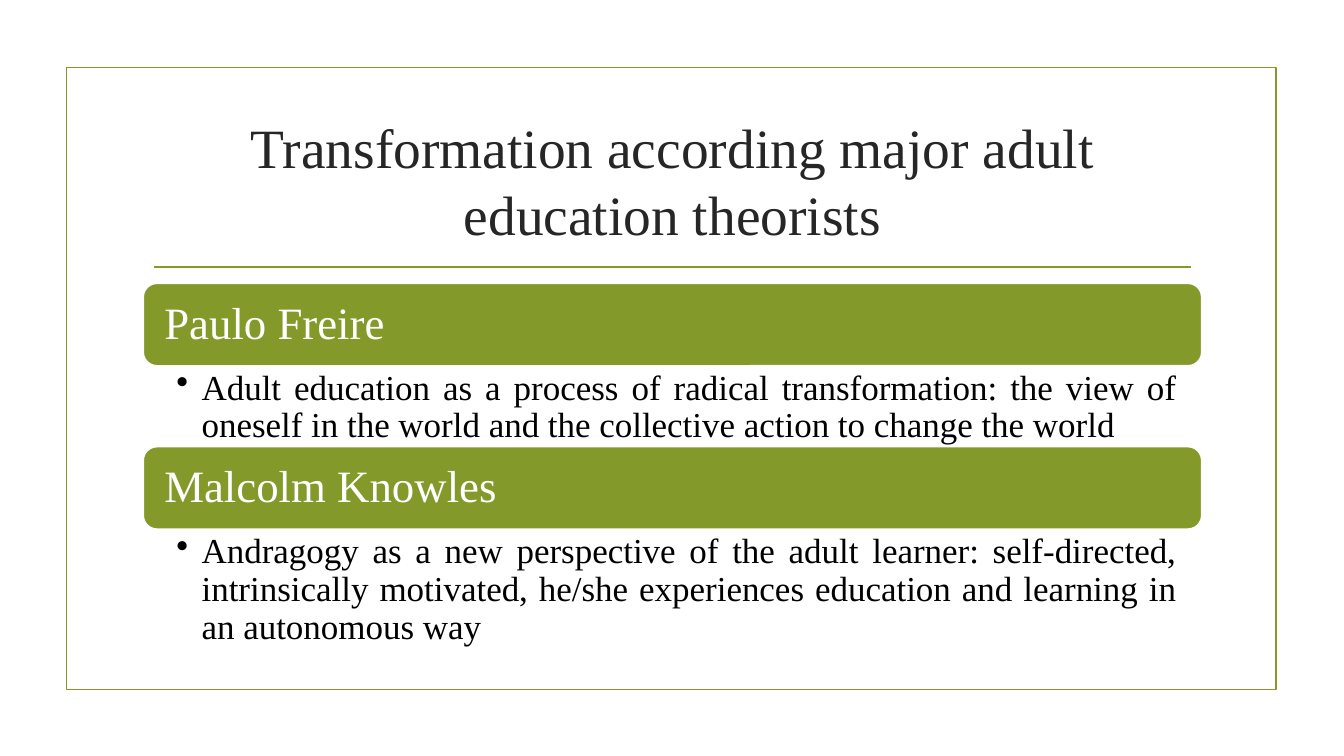
from dataclasses import dataclass

from pptx import Presentation
from pptx.dml.color import RGBColor
from pptx.enum.shapes import MSO_CONNECTOR, MSO_SHAPE
from pptx.enum.text import MSO_ANCHOR, PP_ALIGN
from pptx.oxml.ns import qn
from pptx.shapes.base import BaseShape
from pptx.slide import Slide
from pptx.text.text import TextFrame
from pptx.util import Emu, Pt

FONT = "Times New Roman"
GREEN, WHITE, BLACK, CHARCOAL = "83992A", "FFFFFF", "000000", "262626"
CONTENT_LEFT, CONTENT_WIDTH = 142, 1050
CONTENT_TOP, HEADER_HEIGHT = 281, 82


@dataclass(frozen=True)
class Theorist:
    name: str
    idea: str
    idea_height: int


@dataclass(frozen=True)
class TextStyle:
    size: float
    color: str
    align: PP_ALIGN
    anchor: MSO_ANCHOR
    insets: tuple[int, int, int, int]
    line_spacing: float = 1.0
    bullet: bool = False


TITLE = TextStyle(39.6, CHARCOAL, PP_ALIGN.CENTER, MSO_ANCHOR.MIDDLE, (10, 5, 10, 5))
HEADER = TextStyle(32, WHITE, PP_ALIGN.LEFT, MSO_ANCHOR.MIDDLE, (17, 17, 17, 17), 0.9)
IDEA = TextStyle(25, BLACK, PP_ALIGN.JUSTIFY, MSO_ANCHOR.TOP, (33, 4, 25, 4), 0.9, True)

THEORISTS = [
    Theorist(
        "Paulo Freire",
        "Adult education as a process of radical transformation: the view of "
        "oneself in the world and the collective action to change the world",
        80,
    ),
    Theorist(
        "Malcolm Knowles",
        "Andragogy as a new perspective of the adult learner: self-directed, "
        "intrinsically motivated, he/she experiences education and learning in "
        "an autonomous way",
        116,
    ),
]


def px(value: int) -> Emu:
    return Emu(value * 9144)


def rgb(color: str) -> RGBColor:
    return RGBColor.from_string(color)


def write_text(frame: TextFrame, text: str, style: TextStyle) -> None:
    frame.word_wrap = True
    frame.vertical_anchor = style.anchor
    left, top, right, bottom = map(px, style.insets)
    frame.margin_left, frame.margin_top = left, top
    frame.margin_right, frame.margin_bottom = right, bottom
    paragraph = frame.paragraphs[0]
    paragraph.alignment = style.align
    paragraph.line_spacing = style.line_spacing
    if style.bullet:
        properties = paragraph._p.get_or_add_pPr()
        properties.set("marL", str(px(25)))
        properties.set("indent", str(px(-25)))
        bullet = properties.makeelement(qn("a:buChar"), {"char": "•"})
        properties.append(bullet)
    run = paragraph.add_run()
    run.text = text
    run.font.name = FONT
    run.font.size = Pt(style.size)
    run.font.color.rgb = rgb(style.color)


def add_text(slide: Slide, left: int, top: int, width: int, height: int,
             text: str, style: TextStyle) -> None:
    box = slide.shapes.add_textbox(px(left), px(top), px(width), px(height))
    write_text(box.text_frame, text, style)


def add_outlined(slide: Slide, kind: MSO_SHAPE, left: int, top: int,
                 width: int, height: int, line: str) -> BaseShape:
    shape = slide.shapes.add_shape(kind, px(left), px(top), px(width), px(height))
    shape.shadow.inherit = False
    shape.line.color.rgb = rgb(line)
    shape.line.width = Pt(1.25)
    return shape


def add_rule(slide: Slide, left: int, right: int, y: int) -> None:
    rule = slide.shapes.add_connector(
        MSO_CONNECTOR.STRAIGHT, px(left), px(y), px(right), px(y))
    rule.line.color.rgb = rgb(GREEN)
    rule.line.width = Pt(1.25)
    properties = rule._element.spPr
    properties.append(properties.makeelement(qn("a:effectLst"), {}))


def add_theorist(slide: Slide, top: int, theorist: Theorist) -> int:
    header = add_outlined(slide, MSO_SHAPE.ROUNDED_RECTANGLE, CONTENT_LEFT, top,
                          CONTENT_WIDTH, HEADER_HEIGHT, WHITE)
    header.fill.solid()
    header.fill.fore_color.rgb = rgb(GREEN)
    write_text(header.text_frame, theorist.name, HEADER)
    idea_top = top + HEADER_HEIGHT
    add_text(slide, CONTENT_LEFT, idea_top, CONTENT_WIDTH, theorist.idea_height,
             theorist.idea, IDEA)
    return idea_top + theorist.idea_height


def main() -> None:
    presentation = Presentation()
    presentation.slide_width, presentation.slide_height = px(1333), px(750)
    slide = presentation.slides.add_slide(presentation.slide_layouts[6])
    frame = add_outlined(slide, MSO_SHAPE.RECTANGLE, 66, 67, 1200, 617, GREEN)
    frame.fill.background()
    add_rule(slide, 153, 1181, 265)
    add_text(slide, CONTENT_LEFT, 107, CONTENT_WIDTH, 143,
             "Transformation according major adult education theorists", TITLE)
    top = CONTENT_TOP
    for theorist in THEORISTS:
        top = add_theorist(slide, top, theorist)
    presentation.save("out.pptx")


if __name__ == "__main__":
    main()
